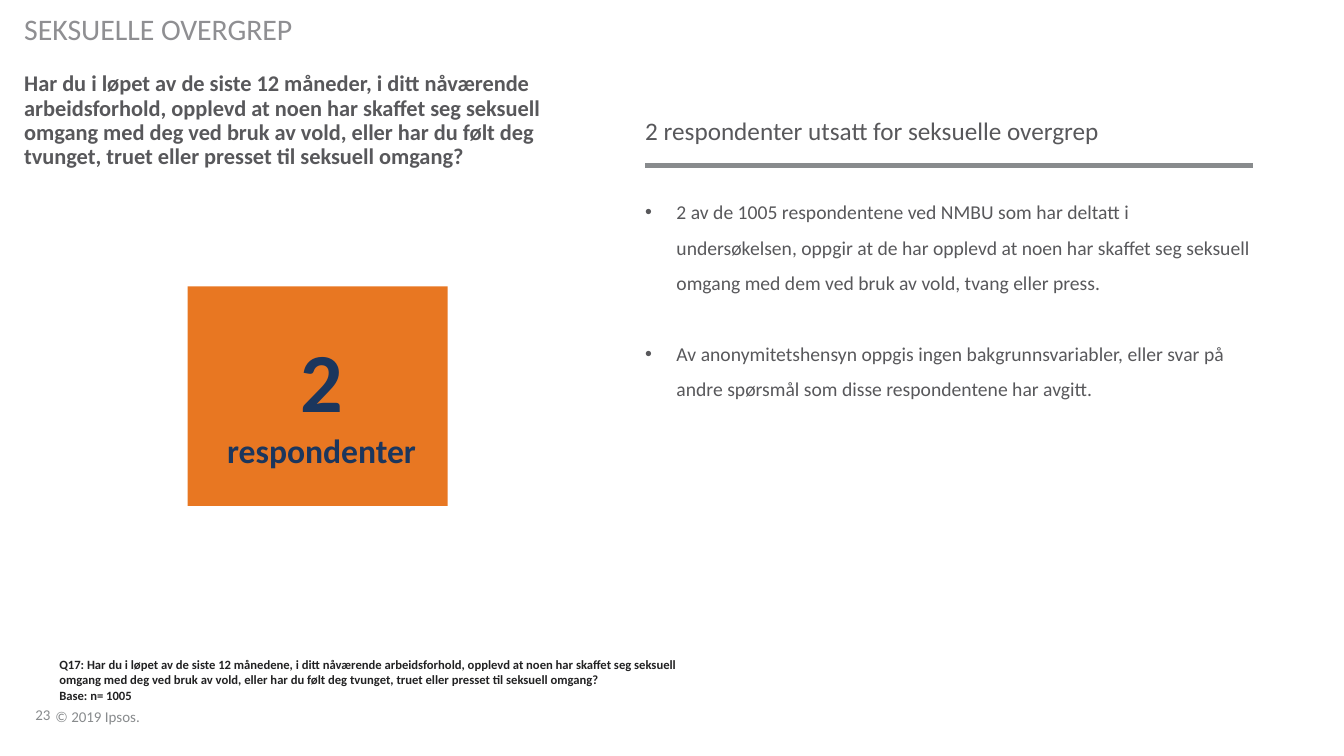
from lxml import etree
from pptx import Presentation
from pptx.dml.color import RGBColor
from pptx.enum.shapes import MSO_CONNECTOR, MSO_SHAPE
from pptx.enum.text import MSO_ANCHOR, PP_ALIGN
from pptx.oxml.ns import qn
from pptx.util import Inches, Pt

LEFT, CENTER = PP_ALIGN.LEFT, PP_ALIGN.CENTER
TOP, MIDDLE, BOTTOM = MSO_ANCHOR.TOP, MSO_ANCHOR.MIDDLE, MSO_ANCHOR.BOTTOM
RECTANGLE, STRAIGHT = MSO_SHAPE.RECTANGLE, MSO_CONNECTOR.STRAIGHT

GREY, LIGHT_GREY, DARK_GREY = "888B8D", "8F8F92", "58585B"
BLACK, NAVY, ORANGE = "222223", "1B365D", "E87722"


def color(value):
    return RGBColor.from_string(value)


class SlideBuilder:
    """Holds the font and current slide, and adds styled elements to it."""

    def __init__(self, page, font="Calibri"):
        self.page = page
        self.font = font

    def text(self, left, top, width, height, lines, size, fill, bold=False,
             anchor=TOP, align=LEFT, spacing=1.0, gap=0, bullet=False, inset=(0, 0)):
        box = self.page.shapes.add_textbox(
            Inches(left), Inches(top), Inches(width), Inches(height))
        frame = box.text_frame
        frame.word_wrap = True
        frame.vertical_anchor = anchor
        frame.margin_left = frame.margin_right = Inches(inset[0])
        frame.margin_top = frame.margin_bottom = Inches(inset[1])
        for index, line in enumerate(lines):
            para = frame.paragraphs[0] if index == 0 else frame.add_paragraph()
            para.text = line
            para.alignment = align
            para.line_spacing = spacing
            if index:
                para.space_before = Pt(gap)
            if bullet:
                self.bullet(para)
            para.font.name = self.font
            para.font.size = Pt(size)
            para.font.bold = bold
            para.font.color.rgb = color(fill)
        return frame

    def bullet(self, para, indent=0.31):
        properties = para._p.get_or_add_pPr()
        properties.set("marL", str(Inches(indent)))
        properties.set("indent", str(-Inches(indent)))
        etree.SubElement(properties, qn("a:buFont")).set("typeface", "Arial")
        etree.SubElement(properties, qn("a:buChar")).set("char", "•")

    def rectangle(self, left, top, width, height, fill):
        shape = self.page.shapes.add_shape(
            RECTANGLE, Inches(left), Inches(top), Inches(width), Inches(height))
        shape.shadow.inherit = False
        shape.fill.solid()
        shape.fill.fore_color.rgb = color(fill)
        shape.line.fill.background()

    def rule(self, left, top, right, fill, weight):
        line = self.page.shapes.add_connector(
            STRAIGHT, Inches(left), Inches(top), Inches(right), Inches(top))
        line.line.color.rgb = color(fill)
        line.line.width = Pt(weight)
        etree.SubElement(line._element.spPr, qn("a:effectLst"))


def main():
    deck = Presentation()
    deck.slide_width, deck.slide_height = Inches(13.33), Inches(7.5)
    slide = SlideBuilder(deck.slides.add_slide(deck.slide_layouts[6]))

    slide.text(0.35, 6.83, 0.45, 0.35, ["23"], 10.7, GREY, anchor=BOTTOM, spacing=0.85)
    slide.text(0.55, 6.95, 1.01, 0.25, ["© 2019 Ipsos."], 10.7, GREY,
               anchor=BOTTOM, spacing=0.85)

    slide.text(0.24, 0.07, 9.81, 0.47, ["SEKSUELLE OVERGREP"], 21.3, LIGHT_GREY,
               anchor=MIDDLE, spacing=0.9)
    slide.text(0.24, 0.72, 5.87, 0.97, [
        "Har du i løpet av de siste 12 måneder, i ditt nåværende arbeidsforhold, "
        "opplevd at noen har skaffet seg seksuell omgang med deg ved bruk av vold, "
        "eller har du følt deg tvunget, truet eller presset til seksuell omgang?",
    ], 16, DARK_GREY, bold=True, spacing=0.9)

    slide.rectangle(1.86, 2.84, 2.58, 2.18, ORANGE)
    figure = slide.text(2.21, 3.26, 1.96, 1.41, ["2", "respondenter"], 24, NAVY,
                        bold=True, align=CENTER)
    figure.paragraphs[0].font.size = Pt(60)

    slide.text(6.4, 1.14, 6.03, 0.54, ["2 respondenter utsatt for seksuelle overgrep"],
               18, DARK_GREY)
    slide.rule(6.4, 1.64, 12.43, GREY, 3.5)
    slide.text(6.4, 1.87, 6.04, 4.32, [
        "2 av de 1005 respondentene ved NMBU som har deltatt i undersøkelsen, oppgir at "
        "de har opplevd at noen har skaffet seg seksuell omgang med dem ved bruk av "
        "vold, tvang eller press.",
        "Av anonymitetshensyn oppgis ingen bakgrunnsvariabler, eller svar på andre "
        "spørsmål som disse respondentene har avgitt.",
    ], 14, DARK_GREY, spacing=1.5, gap=25.5, bullet=True)

    slide.text(0.49, 6.47, 6.67, 0.56, [
        "Q17: Har du i løpet av de siste 12 månedene, i ditt nåværende arbeidsforhold, "
        "opplevd at noen har skaffet seg seksuell omgang med deg ved bruk av vold, "
        "eller har du følt deg tvunget, truet eller presset til seksuell omgang?",
        "Base: n= 1005",
    ], 9, BLACK, bold=True, inset=(0.1, 0.05))

    deck.save("out.pptx")


if __name__ == "__main__":
    main()
